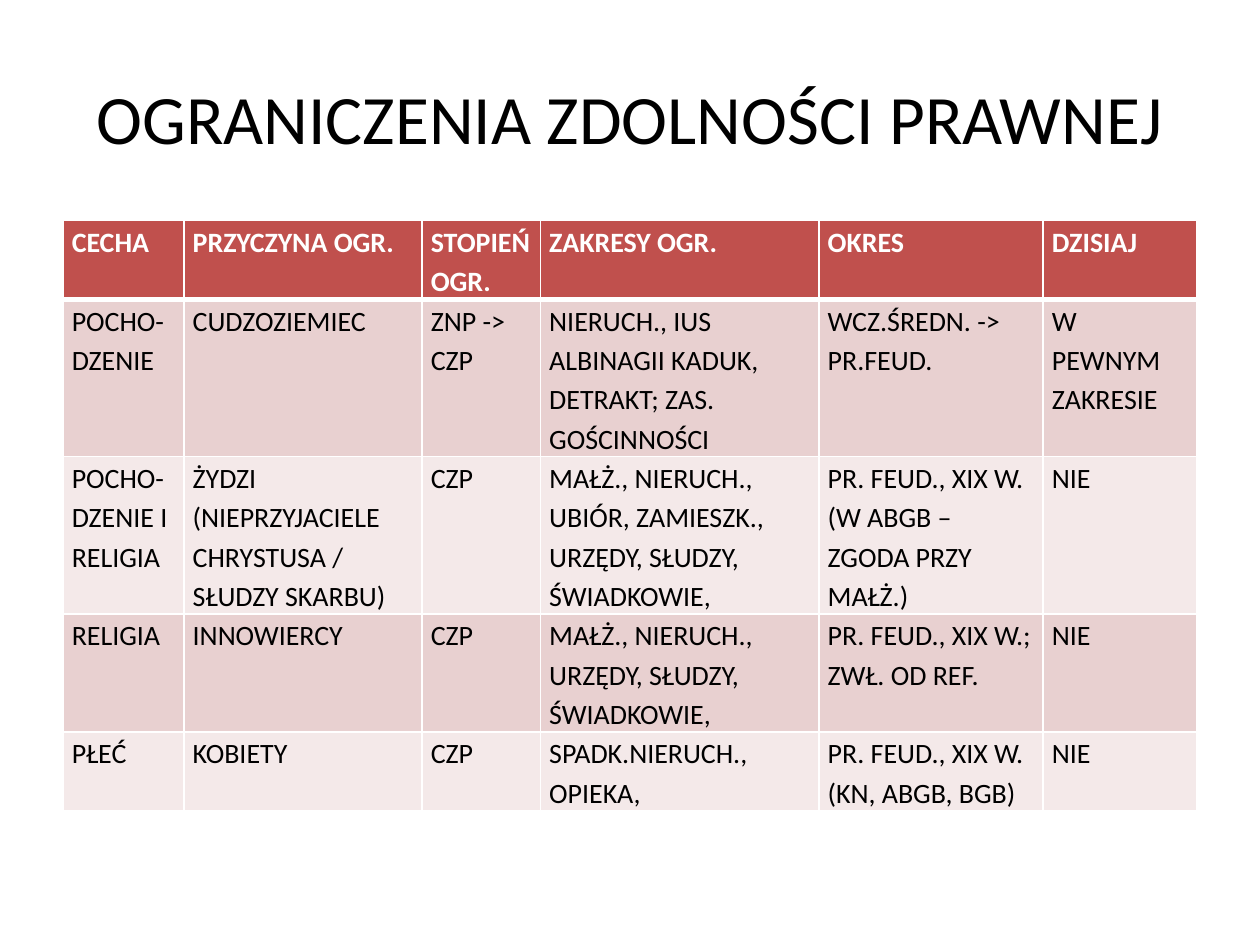
from lxml.etree import SubElement
from pptx import Presentation
from pptx.dml.color import RGBColor
from pptx.enum.text import MSO_ANCHOR, PP_ALIGN
from pptx.oxml.ns import qn
from pptx.util import Inches, Pt

HEAD = ["CECHA", "PRZYCZYNA OGR.", "STOPIEŃ OGR.", "ZAKRESY OGR.", "OKRES", "DZISIAJ"]
ROWS = [
    ["POCHO-DZENIE", "CUDZOZIEMIEC", "ZNP -> CZP",
     "NIERUCH., IUS ALBINAGII KADUK, DETRAKT; ZAS. GOŚCINNOŚCI",
     "WCZ.ŚREDN. -> PR.FEUD.", "W PEWNYM ZAKRESIE"],
    ["POCHO-DZENIE I RELIGIA", "ŻYDZI (NIEPRZYJACIELE CHRYSTUSA / SŁUDZY SKARBU)", "CZP",
     "MAŁŻ., NIERUCH., UBIÓR, ZAMIESZK., URZĘDY, SŁUDZY, ŚWIADKOWIE,",
     "PR. FEUD., XIX W. (W ABGB – ZGODA PRZY MAŁŻ.)", "NIE"],
    ["RELIGIA", "INNOWIERCY", "CZP", "MAŁŻ., NIERUCH., URZĘDY, SŁUDZY, ŚWIADKOWIE,",
     "PR. FEUD., XIX W.; ZWŁ. OD REF.", "NIE"],
    ["PŁEĆ", "KOBIETY", "CZP", "SPADK.NIERUCH., OPIEKA,",
     "PR. FEUD., XIX W. (KN, ABGB, BGB)", "NIE"],
]
WIDTHS = [0.96, 1.89, 0.94, 2.21, 1.78, 1.22]
ROW = 0.41


def tint(code):
    return RGBColor.from_string(code)


def write(frame, text, size=16, color="000000", bold=False, align=PP_ALIGN.LEFT, space=None):
    para = frame.paragraphs[0]
    para.alignment = align
    para.line_spacing = space
    run = para.add_run()
    run.text = text
    font = run.font
    font.name, font.size, font.bold = "Calibri", Pt(size), bold
    font.color.rgb = tint(color)


class Page:
    white, red = "FFFFFF", "C0504D"
    bands = ["E8D0D0", "F4E9E9"]

    def __init__(self, deck):
        self.wide, self.high = deck.slide_width, deck.slide_height
        self.slide = deck.slides.add_slide(deck.slide_layouts[5])

    def box(self, left, top, width, height):
        """Turn shares of the slide's size into lengths."""
        return [int(part * full) for part, full in
                zip((left, top, width, height), (self.wide, self.high) * 2)]

    def title(self, text, *area):
        shape = self.slide.shapes.title
        shape.left, shape.top, shape.width, shape.height = self.box(*area)
        shape.text_frame.vertical_anchor = MSO_ANCHOR.MIDDLE
        write(shape.text_frame, text, size=39.6, align=PP_ALIGN.CENTER)

    def edge(self, cell, side, width):
        line = SubElement(cell._tc.get_or_add_tcPr(), qn(f"a:ln{side}"), w=str(Pt(width)))
        SubElement(SubElement(line, qn("a:solidFill")), qn("a:srgbClr"), val=self.white)

    def cell(self, cell, text, fill, head):
        cell.margin_left = cell.margin_right = Inches(0.07)
        cell.margin_top = cell.margin_bottom = 0
        for side in "LRTB":
            self.edge(cell, side, 3 if head and side == "B" else 1)
        cell.fill.solid()
        cell.fill.fore_color.rgb = tint(fill)
        write(cell.text_frame, text, color=self.white if head else "000000",
              bold=head, space=1.15)

    def table(self, rows, widths, *area):
        grid = self.slide.shapes.add_table(len(rows), len(widths), *self.box(*area)).table
        for col, width in zip(grid.columns, widths):
            col.width = Inches(width)
        for i, texts in enumerate(rows):
            grid.rows[i].height = Inches(ROW)
            fill = self.bands[(i - 1) % 2] if i else self.red
            for j, text in enumerate(texts):
                self.cell(grid.cell(i, j), text, fill, i == 0)


def main():
    deck = Presentation()
    deck.slide_width, deck.slide_height = Inches(10), Inches(7.5)
    page = Page(deck)
    page.title("OGRANICZENIA ZDOLNOŚCI PRAWNEJ", 0.05, 0.04, 0.9, 1 / 6)
    page.table([HEAD] + ROWS, WIDTHS, 0.05, 7 / 30, 0.9, 0.61)
    deck.save("out.pptx")


if __name__ == "__main__":
    main()
